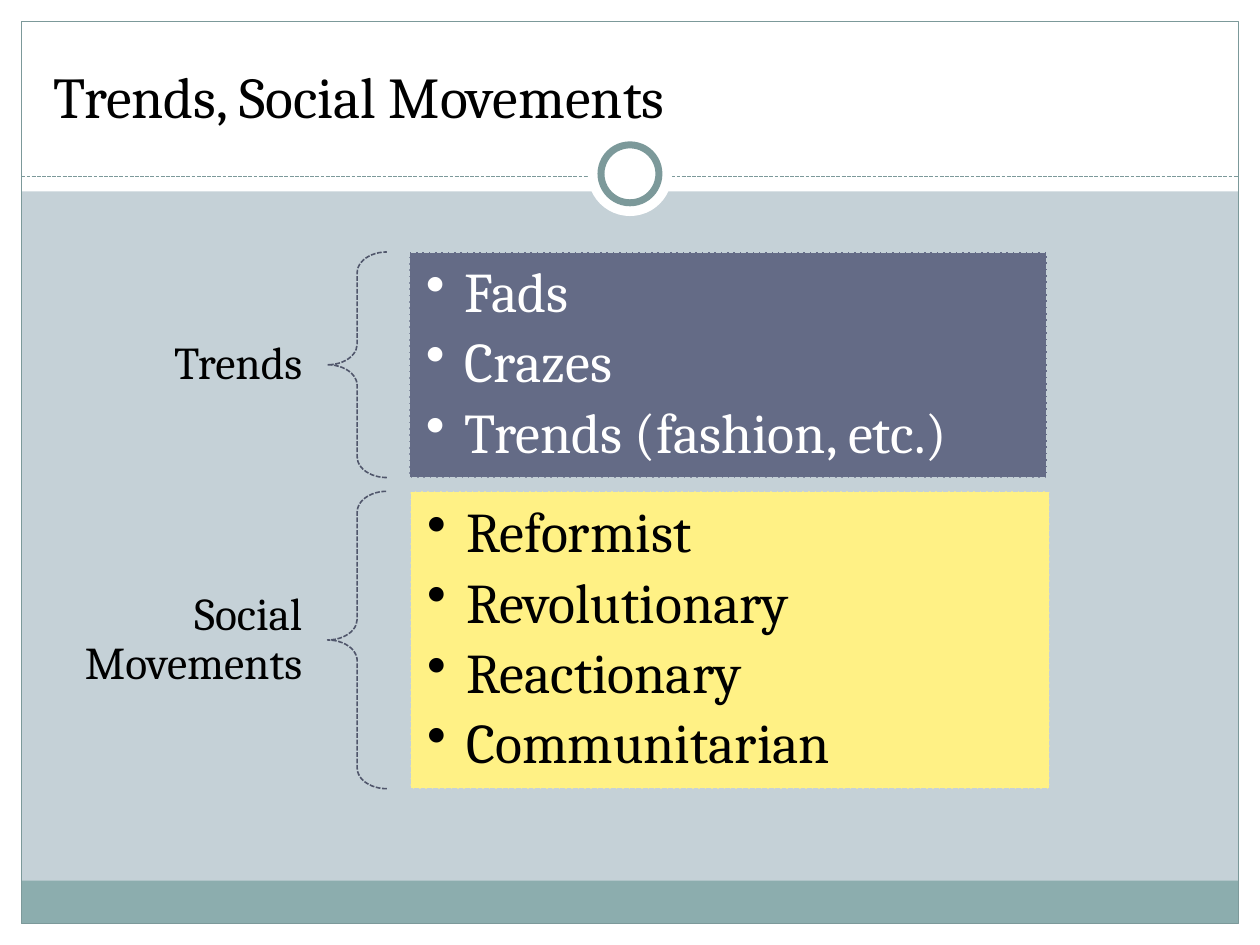
from pptx import Presentation
from pptx.dml.color import RGBColor
from pptx.enum.dml import MSO_LINE
from pptx.enum.shapes import MSO_CONNECTOR, MSO_SHAPE as SHAPE
from pptx.enum.text import MSO_ANCHOR as ANCHOR, PP_ALIGN as ALIGN
from pptx.oxml.ns import qn
from pptx.util import Inches, Pt
from lxml.etree import SubElement

FONT = "Cambria"
BLACK = RGBColor(0x00, 0x00, 0x00)
WHITE = RGBColor(0xFF, 0xFF, 0xFF)
MIST = RGBColor(0xC5, 0xD1, 0xD7)
TEAL = RGBColor(0x8C, 0xAD, 0xAE)
EDGE = RGBColor(0x7C, 0x99, 0x9A)
SLATE = RGBColor(0x64, 0x6B, 0x86)
DARK = RGBColor(0x50, 0x56, 0x6B)
YELLOW = RGBColor(0xFF, 0xF1, 0x85)

TITLE = "Trends, Social Movements"
# label, label height, items, panel left, top, width, height, fill, text colour
GROUPS = [
    ("Trends", 0.56, ["Fads", "Crazes", "Trends (fashion, etc.)"],
     3.25, 2, 5.06, 1.79, SLATE, WHITE),
    ("Social Movements", 0.9,
     ["Reformist", "Revolutionary", "Reactionary", "Communitarian"],
     3.26, 3.9, 5.07, 2.36, YELLOW, BLACK),
]
WIDE, HIGH, EDGE_GAP = 10, 7.5, 0.17
RULE_Y, MID_X, RING_Y = 1.4, 5, 1.38


def style_line(line, color, width, dash=None):
    line.color.rgb = color
    line.width = Pt(width)
    if dash:
        line.dash_style = dash


def add_shape(kind, box, fill=None, line=None):
    """line is (colour, points) or (colour, points, dash)."""
    shape = slide.shapes.add_shape(kind, *map(Inches, box))
    shape.shadow.inherit = False
    if fill is None:
        shape.fill.background()
    else:
        shape.fill.solid()
        shape.fill.fore_color.rgb = fill
    if line:
        style_line(shape.line, *line)
    else:
        shape.line.fill.background()
    return shape


def set_frame(frame, anchor, side, top):
    frame.word_wrap = True
    frame.vertical_anchor = anchor
    frame.margin_left = frame.margin_right = Inches(side)
    frame.margin_top = frame.margin_bottom = Inches(top)


def add_run(para, text, size, color):
    run = para.add_run()
    run.text = text
    run.font.name = FONT
    run.font.size = Pt(size)
    run.font.color.rgb = color


def add_text(box, text, size, align, anchor, side, top, spacing=None):
    frame = slide.shapes.add_textbox(*map(Inches, box)).text_frame
    set_frame(frame, anchor, side, top)
    para = frame.paragraphs[0]
    para.alignment = align
    para.line_spacing = spacing
    add_run(para, text, size, BLACK)


def add_items(frame, items, color):
    set_frame(frame, ANCHOR.MIDDLE, 0.13, 0.13)
    for i, item in enumerate(items):
        para = frame.paragraphs[0] if i == 0 else frame.add_paragraph()
        props = para._p.get_or_add_pPr()
        props.set("marL", str(Inches(0.31)))
        props.set("indent", str(Inches(-0.31)))
        SubElement(props, qn("a:buChar"), char="•")
        para.alignment = ALIGN.LEFT
        para.line_spacing = 0.9
        para.space_after = Pt(5.6)
        add_run(para, item, 32, color)


def add_frame():
    """Page border, header band, footer band, dashed rule and ring."""
    inner = WIDE - 2 * EDGE_GAP
    for box in [(0, HIGH - EDGE_GAP, WIDE, EDGE_GAP), (0, 0, WIDE, 1.52),
                (0, 0, EDGE_GAP, HIGH),
                (WIDE - EDGE_GAP, 0, EDGE_GAP, HIGH)]:
        add_shape(SHAPE.RECTANGLE, box, WHITE)
    add_shape(SHAPE.RECTANGLE, (EDGE_GAP, 6.99, inner, 0.34), TEAL)
    add_shape(SHAPE.RECTANGLE,
              (EDGE_GAP, EDGE_GAP, inner, HIGH - 2 * EDGE_GAP),
              line=(EDGE, 0.75))
    rule = slide.shapes.add_connector(
        MSO_CONNECTOR.STRAIGHT, Inches(EDGE_GAP), Inches(RULE_Y),
        Inches(WIDE - EDGE_GAP), Inches(RULE_Y))
    style_line(rule.line, EDGE, 0.75, MSO_LINE.SQUARE_DOT)
    SubElement(rule._element.spPr, qn("a:effectLst"))
    for size, line in [(0.67, None), (0.46, (EDGE, 4))]:
        box = (MID_X - size / 2, RING_Y - size / 2, size, size)
        add_shape(SHAPE.OVAL, box, WHITE, line)


def add_group(label, tall, items, left, top, width, height, fill, color):
    add_text((0.25, top + (height - tall) / 2, 2.35, tall), label, 26,
             ALIGN.RIGHT, ANCHOR.MIDDLE, 0.2, 0.07, 0.9)
    brace = add_shape(SHAPE.LEFT_BRACE, (2.6, top, 0.47, height),
                      line=(DARK, 0.9, MSO_LINE.SQUARE_DOT))
    brace.adjustments[0] = 0.35
    brace.adjustments[1] = 0.5
    panel = add_shape(SHAPE.RECTANGLE, (left, top, width, height), fill,
                      (MIST, 0.9, MSO_LINE.SQUARE_DOT))
    add_items(panel.text_frame, items, color)


deck = Presentation()
deck.slide_width, deck.slide_height = Inches(WIDE), Inches(HIGH)
slide = deck.slides.add_slide(deck.slide_layouts[6])
slide.background.fill.solid()
slide.background.fill.fore_color.rgb = MIST

add_frame()
add_text((0.33, 0.25, 9.33, 0.83), TITLE, 33, ALIGN.LEFT, ANCHOR.BOTTOM,
         0.1, 0.05)
for group in GROUPS:
    add_group(*group)
deck.save("out.pptx")
